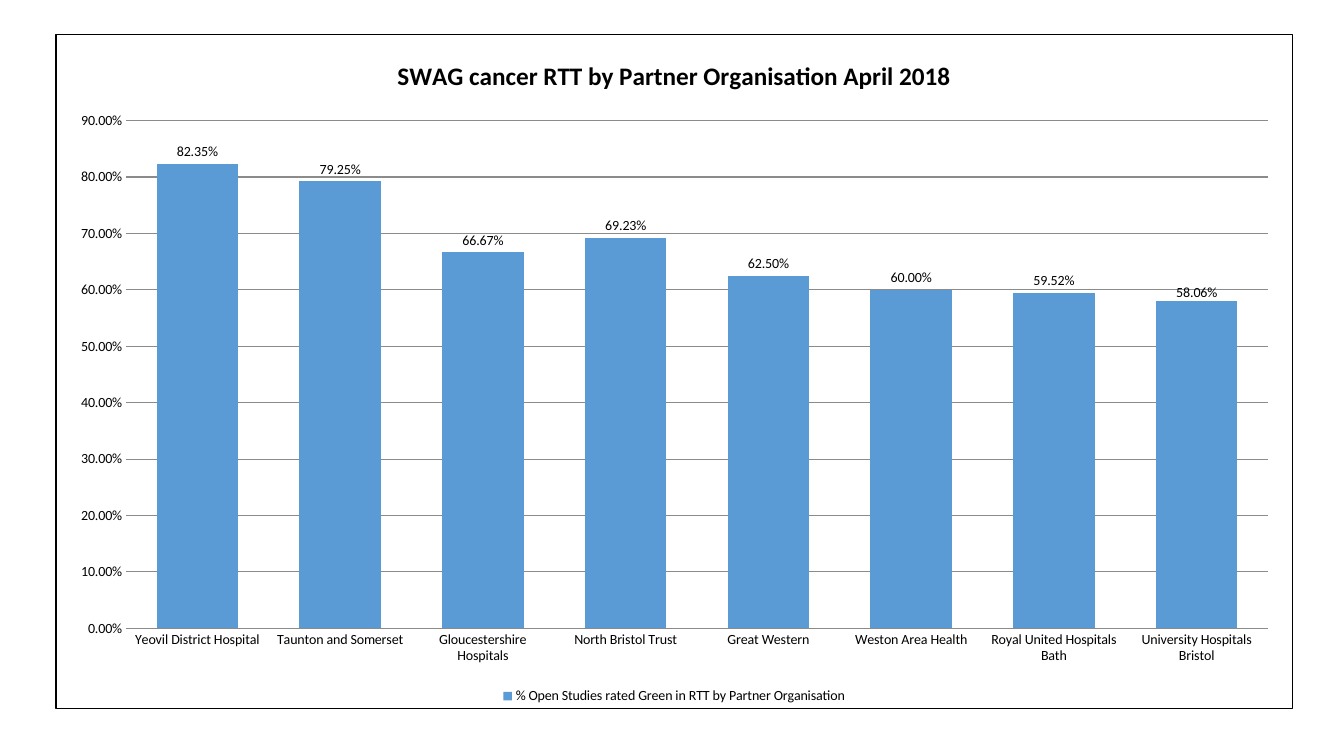
from typing import Any, NamedTuple

from lxml import etree
from pptx import Presentation
from pptx import util as u
from pptx.chart.data import CategoryChartData
from pptx.dml.color import RGBColor
from pptx.enum import chart as ch
from pptx.oxml import parse_xml
from pptx.oxml.ns import nsdecls, qn


class Organisation(NamedTuple):
    name: str
    green_share: float


class Area(NamedTuple):
    """Left, top, width and height in percent of the enclosing area."""
    x: float
    y: float
    w: float
    h: float


TITLE = "SWAG cancer RTT by Partner Organisation April 2018"
SERIES = "% Open Studies rated Green in RTT by Partner Organisation"
PERCENT = "0.00%"
GREY = "8B8B8B"
FRAME = Area(4.13, 4.53, 92.05, 89.2)
PLOT = Area(5.66, 12.76, 92.4, 75.4)
ORGANISATIONS = [
    Organisation("Yeovil District Hospital", 0.8235),
    Organisation("Taunton and Somerset", 0.7925),
    Organisation("Gloucestershire Hospitals", 0.6667),
    Organisation("North Bristol Trust", 0.6923),
    Organisation("Great Western", 0.625),
    Organisation("Weston Area Health", 0.6),
    Organisation("Royal United Hospitals Bath", 0.5952),
    Organisation("University Hospitals Bristol", 0.5806),
]


def rgb(value: str) -> RGBColor:
    return RGBColor.from_string(value)


def apply(target: Any, values: dict[str, Any]) -> None:
    for name, value in values.items():
        setattr(target, name, value)


def style_font(font: Any, size: float, bold: bool = False) -> None:
    apply(font, {"name": "Calibri", "size": u.Pt(size), "bold": bold})
    font.color.rgb = rgb("000000")


def style_line(line: Any, colour: str) -> None:
    line.color.rgb = rgb(colour)
    line.width = u.Pt(0.75)


def manual_layout(values: dict[str, Any]) -> etree._Element:
    items = "".join(f'<c:{tag} val="{val}"/>' for tag, val in values.items())
    return parse_xml(f"<c:layout {nsdecls('c')}><c:manualLayout>{items}"
                     "</c:manualLayout></c:layout>")


def add_rtt_chart(prs: Any, s: Any) -> Any:
    data = CategoryChartData(number_format=PERCENT)
    data.categories = [o.name for o in ORGANISATIONS]
    data.add_series(SERIES, [o.green_share for o in ORGANISATIONS])
    width, height = prs.slide_width, prs.slide_height
    box = [int(side * share / 100)
           for side, share in zip((width, height, width, height), FRAME)]
    return s.shapes.add_chart(ch.XL_CHART_TYPE.COLUMN_CLUSTERED, *box, data).chart


def style_title_and_legend(chart: Any) -> None:
    chart.has_title = True
    tf = chart.chart_title.text_frame
    tf.text = TITLE
    style_font(tf.paragraphs[0].runs[0].font, 18, True)
    chart.chart_title.include_in_layout = False
    chart.has_legend = True
    apply(chart.legend, {"position": ch.XL_LEGEND_POSITION.BOTTOM,
                         "include_in_layout": False})


def style_axes(chart: Any) -> None:
    none = ch.XL_TICK_MARK.NONE
    for axis in (chart.category_axis, chart.value_axis):
        apply(axis, {"major_tick_mark": none, "minor_tick_mark": none})
    style_line(chart.category_axis.format.line, GREY)
    axis = chart.value_axis
    apply(axis, {"minimum_scale": 0, "maximum_scale": 0.9, "major_unit": 0.1,
                 "has_major_gridlines": True})
    apply(axis.tick_labels, {"number_format": PERCENT,
                             "number_format_is_linked": False})
    axis.format.line.fill.background()
    style_line(axis.major_gridlines.format.line, GREY)


def style_columns(chart: Any) -> None:
    plot = chart.plots[0]
    apply(plot, {"gap_width": 75, "overlap": -25, "vary_by_categories": False})
    series = plot.series[0]
    series.format.fill.solid()
    series.format.fill.fore_color.rgb = rgb("5B9BD5")
    labels = series.data_labels
    outside = ch.XL_LABEL_POSITION.OUTSIDE_END
    apply(labels, {"show_value": True, "number_format": PERCENT,
                   "number_format_is_linked": False, "position": outside})
    # The last label sits slightly closer to its column
    last = len(ORGANISATIONS) - 1
    series.points[last].data_label.position = outside
    idx = labels._element.find(f"{qn('c:dLbl')}/{qn('c:idx')}")
    idx.addnext(manual_layout({"x": 0, "y": 0.006}))


def style_frame(chart: Any) -> None:
    # Plot position inside the chart
    area = chart._chartSpace.chart.plotArea
    for old in area.findall(qn("c:layout")):
        area.remove(old)
    edges = {tag: share / 100 for tag, share in PLOT._asdict().items()}
    area.insert(0, manual_layout({"layoutTarget": "inner", "xMode": "edge",
                                  "yMode": "edge", **edges}))
    # Border around the chart
    chart._chartSpace.chart.addnext(parse_xml(
        f"<c:spPr {nsdecls('c', 'a')}>"
        '<a:solidFill><a:srgbClr val="FFFFFF"/></a:solidFill>'
        f'<a:ln w="{u.Pt(0.75)}"><a:solidFill><a:srgbClr val="000000"/>'
        "</a:solidFill></a:ln></c:spPr>"))


def main() -> None:
    prs = Presentation()
    apply(prs, {"slide_width": u.Inches(13.33), "slide_height": u.Inches(7.5)})
    s = prs.slides.add_slide(prs.slide_layouts[6])
    chart = add_rtt_chart(prs, s)
    style_font(chart.font, 10)
    style_title_and_legend(chart)
    style_axes(chart)
    style_columns(chart)
    style_frame(chart)
    prs.save("out.pptx")


if __name__ == "__main__":
    main()
